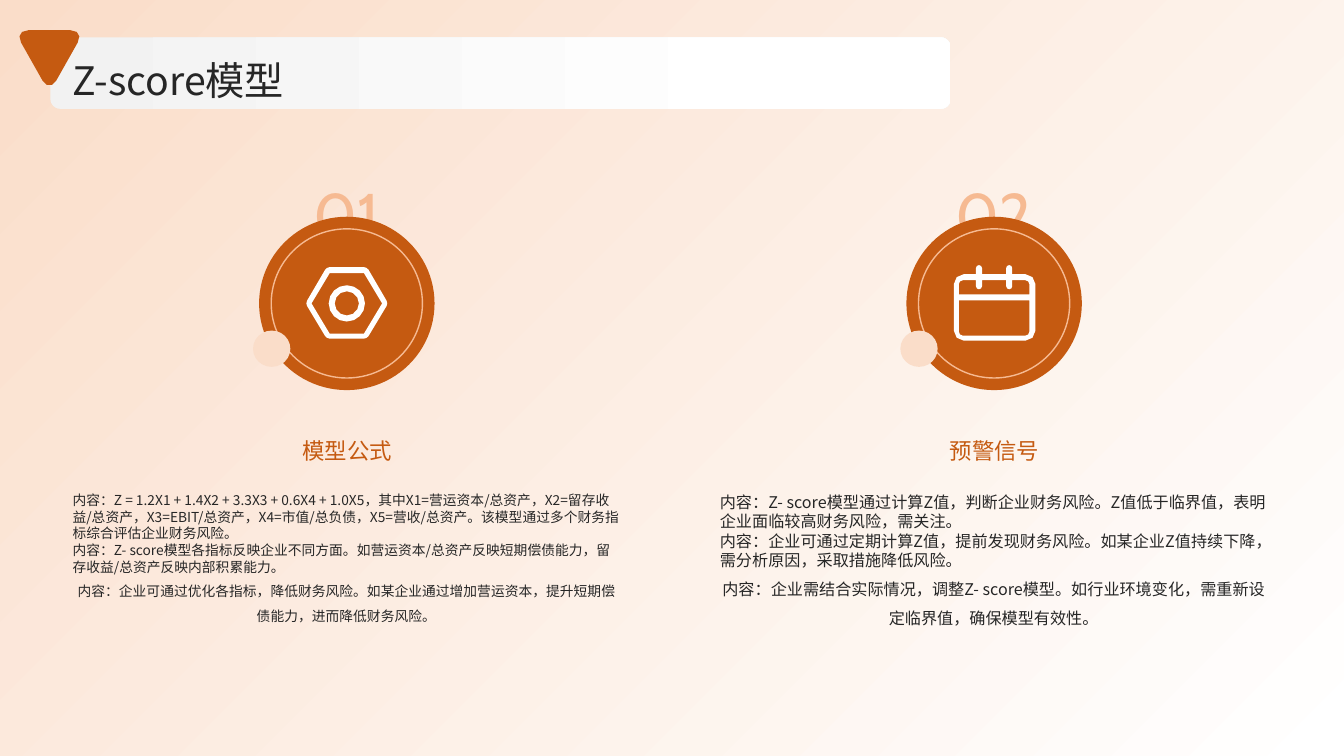
"""Build the Z-score model slide with two illustrated columns."""
from lxml import etree
from pptx import Presentation
from pptx.dml.color import RGBColor
from pptx.enum.shapes import MSO_SHAPE as SHAPE
from pptx.enum.text import MSO_ANCHOR as ANCHOR, MSO_AUTO_SIZE as AUTO, PP_ALIGN as ALIGN
from pptx.oxml.ns import qn
from pptx.util import Pt

PX = 9144
CJK = "Noto Sans CJK SC"
ORANGE, PEACH, PALE, DARK, WHITE = "C55A11", "F6BA92", "FADDC9", "262626", "FFFFFF"


def paint(target, color, end=None, angle=0, stop=1.0):
    """Fill a shape or font with one colour, or a gradient when an end colour is given."""
    fill = target.fill
    if end is None:
        fill.solid()
        fill.fore_color.rgb = RGBColor.from_string(color)
        return
    fill.gradient()
    fill.gradient_angle = angle
    for grad_stop, rgb, position in zip(fill.gradient_stops, (color, end), (0.0, stop)):
        grad_stop.color.rgb = RGBColor.from_string(rgb)
        grad_stop.position = position


def rounded(corners):
    """Return the outline through (x, y, cut) corners, in EMU, with cut corners curved."""
    points = []
    for i, (x, y, cut) in enumerate(corners):
        ends = []
        for nx, ny, _ in (corners[i - 1], corners[(i + 1) % len(corners)]):
            t = cut / ((nx - x) ** 2 + (ny - y) ** 2) ** 0.5
            ends.append((x + (nx - x) * t, y + (ny - y) * t))
        (ax, ay), (bx, by) = ends
        steps = max(2, cut // 4)
        for step in range(steps + 1 if cut else 1):
            t = step / steps
            a = (1 - t) ** 3 + 1.35 * t * (1 - t) ** 2
            b = t ** 3 + 1.35 * t ** 2 * (1 - t)
            c = 1 - a - b
            point = (round((a * ax + b * bx + c * x) * PX), round((a * ay + b * by + c * y) * PX))
            if point not in points:
                points.append(point)
    return points


prs = Presentation()
prs.slide_width, prs.slide_height = 1333 * PX, 750 * PX
s = prs.slides.add_slide(prs.slide_layouts[5])
title = s.shapes.title

hexagon = [
    [(324, 265, 3), (364, 265, 3), (385, 301, 3), (364, 336, 3), (324, 336, 3), (303, 301, 3)],
    [(327, 271, 0), (361, 271, 0), (379, 301, 0), (361, 331, 0), (327, 331, 0), (309, 301, 0)],
]
hexagon += [[(344 - r, 301 - r, r), (344 + r, 301 - r, r), (344 + r, 301 + r, r), (344 - r, 301 + r, r)]
            for r in (18, 12)]
calendar = [
    [(946, 272, 10), (968, 272, 0), (968, 263, 3), (974, 263, 3), (974, 272, 0), (998, 272, 0),
     (998, 263, 3), (1004, 263, 3), (1004, 272, 0), (1027, 272, 10), (1027, 338, 10), (946, 338, 10)],
    [(951, 278, 4), (968, 278, 0), (968, 287, 3), (974, 287, 3), (974, 278, 0), (998, 278, 0),
     (998, 287, 3), (1004, 287, 3), (1004, 278, 0), (1021, 278, 4), (1021, 292, 0), (951, 292, 0)],
    [(951, 298, 0), (1021, 298, 0), (1021, 333, 4), (951, 333, 4)],
]
triangle = [[(14, 30, 14), (84, 30, 14), (49, 92, 14)]]

columns = [
    ("01", "模型公式", 9.8, hexagon, [
        "内容：Z = 1.2X1 + 1.4X2 + 3.3X3 + 0.6X4 + 1.0X5，其中X1=营运资本/总资产，X2=留存收益/总资产，"
        "X3=EBIT/总资产，X4=市值/总负债，X5=营收/总资产。该模型通过多个财务指标综合评估企业财务风险。",
        "内容：Z- score模型各指标反映企业不同方面。如营运资本/总资产反映短期偿债能力，留存收益/总资产反映内部积累能力。",
        "内容：企业可通过优化各指标，降低财务风险。如某企业通过增加营运资本，提升短期偿债能力，进而降低财务风险。"]),
    ("02", "预警信号", 11.5, calendar, [
        "内容：Z- score模型通过计算Z值，判断企业财务风险。Z值低于临界值，表明企业面临较高财务风险，需关注。",
        "内容：企业可通过定期计算Z值，提前发现财务风险。如某企业Z值持续下降，需分析原因，采取措施降低风险。",
        "内容：企业需结合实际情况，调整Z- score模型。如行业环境变化，需重新设定临界值，确保模型有效性。"]),
]

L, C = ALIGN.LEFT, ALIGN.CENTER
items = [("shape", SHAPE.RECTANGLE, (0, 0, 1333, 750), (WHITE, PALE, 135), None)]
for i, (number, heading, size, icon, lines) in enumerate(columns):
    x = 72 + 642 * i
    body = [(line, align, Pt(size * leading))
            for line, align, leading in zip(lines, (L, L, C), (1.21, 1.21, 1.81))]
    items += [
        ("text", None, (x + 219, 166, 106, 69), [(number, C, 1.3)], (44, "Cabin", PEACH, ANCHOR.MIDDLE)),
        ("shape", SHAPE.OVAL, (x + 185, 215, 174, 172), (ORANGE,), None),
        ("shape", SHAPE.OVAL, (x + 197, 227, 150, 148), (ORANGE,), PEACH),
        ("free", icon, None, (WHITE,), None),
        ("shape", SHAPE.OVAL, (x + 179, 328, 37, 36), (PALE,), None),
        ("text", None, (x, 488, 543, 144), body, (size, CJK, DARK, ANCHOR.TOP)),
        ("text", None, (x, 397, 545, 91), [(heading, C, 1.3)], (16, CJK, ORANGE, ANCHOR.MIDDLE)),
    ]
items += [
    ("shape", SHAPE.ROUNDED_RECTANGLE, (50, 37, 893, 71), ("F2F2F2", WHITE, 0, 0.8), None),
    ("text", title, (72, 51, 1167, 51), [("Z-score模型", L, 1.1)], (28, CJK, DARK, ANCHOR.MIDDLE)),
    ("free", triangle, None, (ORANGE,), None),
]

for kind, source, box, content, style in items:
    if box:
        box = [v * PX for v in box]
    if kind == "text":
        size, face, color, anchor = style
        sp = source or s.shapes.add_textbox(*box)
        sp.left, sp.top, sp.width, sp.height = box
        s.shapes._spTree.append(sp._element)
        tf = sp.text_frame
        tf.margin_left = tf.margin_top = tf.margin_right = tf.margin_bottom = 0
        tf.word_wrap, tf.auto_size, tf.vertical_anchor = True, AUTO.NONE, anchor
        for n, (text, align, spacing) in enumerate(content):
            p = tf.add_paragraph() if n else tf.paragraphs[0]
            p.text, p.alignment, p.line_spacing = text, align, spacing
            p.space_before = p.space_after = Pt(0)
            r = p.runs[0]
            r.font.size, r.font.name = Pt(size), face
            paint(r.font, color)
            etree.SubElement(r._r.get_or_add_rPr(), qn("a:ea")).set("typeface", face)
        continue
    if kind == "free":
        first, *others = [rounded(corners) for corners in source]
        fb = s.shapes.build_freeform(*first[0], scale=1.0)
        fb.add_line_segments(first[1:], close=True)
        for outline in others:
            fb.move_to(*outline[0])
            fb.add_line_segments(outline[1:], close=True)
        sp = fb.convert_to_shape()
    else:
        sp = s.shapes.add_shape(source, *box)
        if source == SHAPE.ROUNDED_RECTANGLE:
            sp.adjustments[0] = 0.14
    sp.shadow.inherit = False
    paint(sp, *content)
    if style:
        paint(sp.line, style)
        sp.line.width = Pt(1)
    else:
        sp.line.fill.background()

prs.save("out.pptx")
